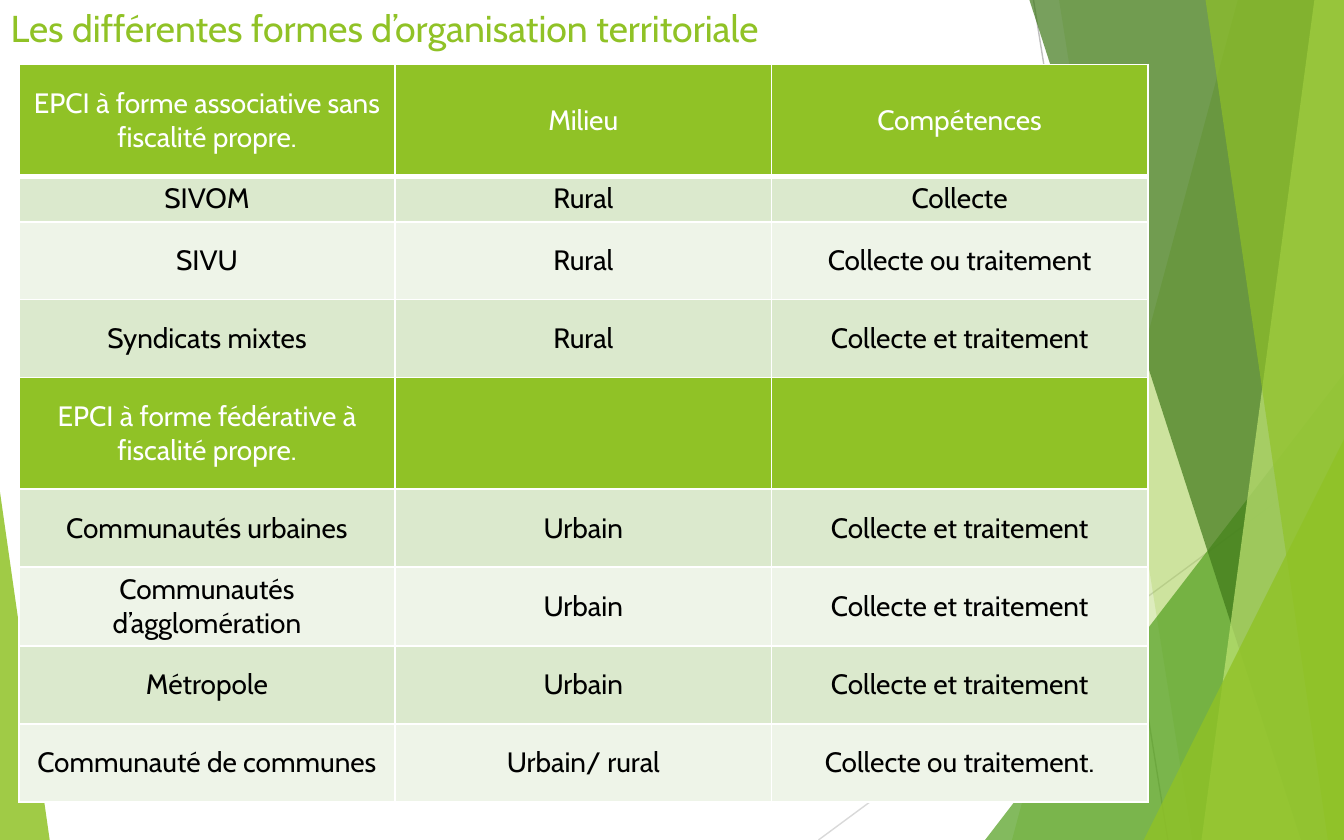
from dataclasses import dataclass

from lxml.etree import SubElement
from pptx import Presentation
from pptx.dml.color import RGBColor
from pptx.enum.shapes import MSO_CONNECTOR as CONN, MSO_SHAPE as SHAPE
from pptx.enum.text import MSO_ANCHOR as ANCHOR, PP_ALIGN as ALIGN
from pptx.oxml.ns import qn
from pptx.util import Inches, Pt


@dataclass(frozen=True)
class Theme:
    font: str = "Cabin"
    title_size: float = 20
    cell_size: float = 15
    green: str = "90C226"
    leaf: str = "54A021"
    forest: str = "3F7819"
    lime: str = "C0E474"
    band_dark: str = "DBE9CD"
    band_light: str = "EEF4E8"
    white: str = "FFFFFF"
    black: str = "000000"
    grey: str = "BFBFBF"
    light_grey: str = "D9D9D9"


T = Theme()
W, H = 10, 6.25

TITLE = "Les différentes formes d’organisation territoriale"
ROWS = [
    ("EPCI à forme associative sans fiscalité propre.", "Milieu", "Compétences"),
    ("SIVOM", "Rural", "Collecte"),
    ("SIVU", "Rural", "Collecte ou traitement"),
    ("Syndicats mixtes", "Rural", "Collecte et traitement"),
    ("EPCI à forme fédérative à fiscalité propre.", "", ""),
    ("Communautés urbaines", "Urbain", "Collecte et traitement"),
    ("Communautés d’agglomération", "Urbain", "Collecte et traitement"),
    ("Métropole", "Urbain", "Collecte et traitement"),
    ("Communauté de communes", "Urbain/ rural", "Collecte ou traitement."),
]
HEADER_ROWS = (0, 4)
HEADER_H, FIRST_ROW_H, ROW_H = 0.83, 0.34, 0.58
COL_W = 2.8


def rgb(code):
    return RGBColor.from_string(code)


def write(tf, text, size, color, align=ALIGN.LEFT, anchor=ANCHOR.MIDDLE):
    tf.word_wrap = True
    tf.vertical_anchor = anchor
    p = tf.paragraphs[0]
    p.alignment = align
    r = p.add_run()
    r.text = text
    r.font.name, r.font.size = T.font, Pt(size)
    r.font.color.rgb = rgb(color)


def paint(sp, color, opacity):
    """Fill without outline or shadow; opacity in percent."""
    sp.shadow.inherit = False
    sp.line.fill.background()
    sp.fill.solid()
    sp.fill.fore_color.rgb = rgb(color)
    clr = sp.fill._xPr.find(qn("a:solidFill"))[0]
    SubElement(clr, qn("a:alpha")).set("val", str(opacity * 1000))


def add_line(s, start, end, color):
    ln = s.shapes.add_connector(CONN.STRAIGHT, *map(Inches, start + end))
    ln.line.color.rgb = rgb(color)
    ln.line.width = Pt(0.75)
    SubElement(ln.element.spPr, qn("a:effectLst"))


def add_blade(s, top_x, bottom_x, color, opacity):
    """Full-height shape from a slanted left edge to the slide's right edge."""
    corners = [(top_x, 0), (W, 0), (W, H), (bottom_x, H)]
    points = [(Inches(x), Inches(y)) for x, y in corners]
    fb = s.shapes.build_freeform(*points[0])
    fb.add_line_segments(points[1:], close=True)
    paint(fb.convert_to_shape(), color, opacity)


def add_corner(s, left, top, width, apex, color, opacity):
    """Triangle standing on the slide's bottom edge."""
    box = map(Inches, (left, top, width, H - top))
    sp = s.shapes.add_shape(SHAPE.ISOSCELES_TRIANGLE, *box)
    sp.adjustments[0] = apex
    paint(sp, color, opacity)


def add_background(s):
    add_line(s, (7.69, 0), (8.69, H), T.grey)
    add_line(s, (W, 3.36), (6.09, H), T.light_grey)
    add_blade(s, 9.21, 7.53, T.green, 30)
    add_blade(s, 7.88, 8.87, T.green, 20)
    add_corner(s, 7.33, 2.78, 2.67, 1, T.leaf, 72)
    add_blade(s, 7.66, 9.68, T.forest, 70)
    add_blade(s, 9.78, 8.94, T.lime, 70)
    add_blade(s, 8.97, 9.88, T.green, 65)
    add_corner(s, 8.51, 3.27, 1.49, 1, T.green, 80)
    add_corner(s, 0, 3.66, 0.37, 0, T.green, 85)


def add_title(s):
    sp = s.shapes.title
    sp.left, sp.top, sp.width, sp.height = map(Inches, (0, 0, 8.72, 0.61))
    tf = sp.text_frame
    tf.margin_left = tf.margin_right = Inches(0.08)
    tf.margin_top = tf.margin_bottom = Inches(0.04)
    write(tf, TITLE, T.title_size, T.green, anchor=ANCHOR.TOP)
    sp.element.getparent().append(sp.element)  # in front of the background


def set_borders(cell, bottom=1):
    tcPr = cell._tc.get_or_add_tcPr()
    for side, width in zip("LRTB", (1, 1, 1, bottom)):
        ln = SubElement(tcPr, qn(f"a:ln{side}"), w=str(Pt(width)))
        fill = SubElement(ln, qn("a:solidFill"))
        SubElement(fill, qn("a:srgbClr"), val=T.white)


def row_style(i):
    """Fill, text colour and height of a table row."""
    if i in HEADER_ROWS:
        return T.green, T.white, HEADER_H
    return (T.band_dark if i % 2 else T.band_light, T.black,
            FIRST_ROW_H if i == 1 else ROW_H)


def add_communes_table(s):
    styles = [row_style(i) for i in range(len(ROWS))]
    n_cols = len(ROWS[0])
    height = sum(h for _, _, h in styles)
    box = map(Inches, (0.14, 0.48, n_cols * COL_W, height))
    tbl = s.shapes.add_table(len(ROWS), n_cols, *box).table
    for col in tbl.columns:
        col.width = Inches(COL_W)
    for i, (texts, (fill, color, row_h)) in enumerate(zip(ROWS, styles)):
        tbl.rows[i].height = Inches(row_h)
        for cell, text in zip(tbl.rows[i].cells, texts):
            set_borders(cell, bottom=3 if i == 0 else 1)
            cell.fill.solid()
            cell.fill.fore_color.rgb = rgb(fill)
            cell.margin_left = cell.margin_right = Inches(0.08)
            cell.margin_top = cell.margin_bottom = Inches(0.04)
            cell.vertical_anchor = ANCHOR.MIDDLE
            if text:
                write(cell.text_frame, text, T.cell_size, color, ALIGN.CENTER)


def main():
    prs = Presentation()
    prs.slide_width, prs.slide_height = Inches(W), Inches(H)
    s = prs.slides.add_slide(prs.slide_layouts[5])  # title only
    add_background(s)
    add_title(s)
    add_communes_table(s)
    prs.save("out.pptx")


if __name__ == "__main__":
    main()
